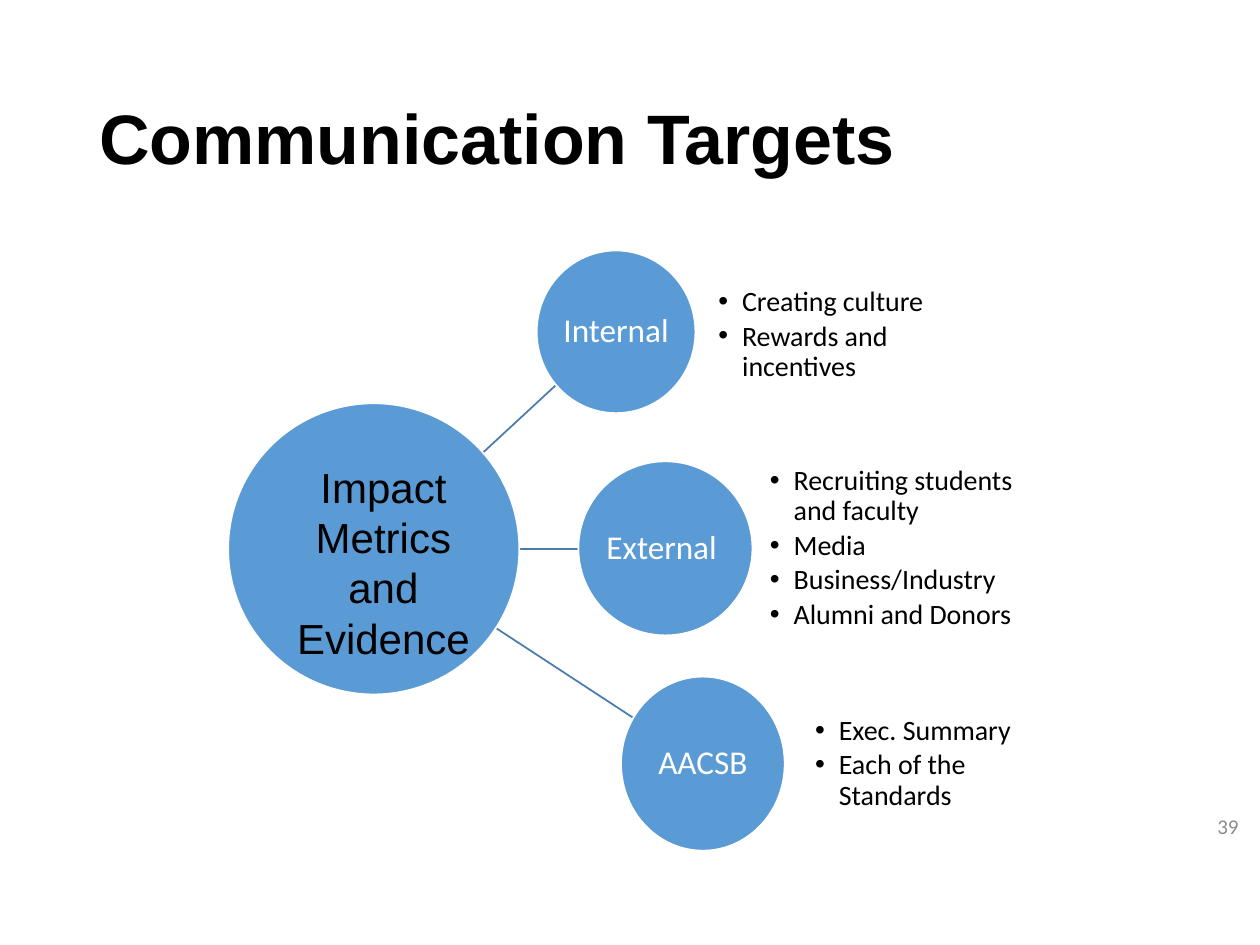
from dataclasses import dataclass

from lxml.etree import SubElement
from pptx import Presentation
from pptx.dml.color import RGBColor as RGB
from pptx.enum.shapes import MSO_CONNECTOR as CONN, MSO_SHAPE as SHAPE
from pptx.enum.text import MSO_ANCHOR as ANCHOR, MSO_AUTO_SIZE as AUTO, PP_ALIGN as ALIGN
from pptx.oxml.ns import qn
from pptx.util import Cm, Pt


@dataclass(frozen=True)
class Theme:
    blue: RGB = RGB.from_string("5B9BD5")
    link: RGB = RGB.from_string("497CAB")
    white: RGB = RGB.from_string("FFFFFF")
    black: RGB = RGB.from_string("000000")
    grey: RGB = RGB.from_string("8C8C8C")
    head: str = "Arial"
    text: str = "Calibri"
    title: Pt = Pt(40)
    hub: Pt = Pt(24)
    node: Pt = Pt(19)
    item: Pt = Pt(16)
    number: Pt = Pt(12)


T = Theme()
FLUSH = dict.fromkeys(("margin_left", "margin_top", "margin_right", "margin_bottom"), 0)


def write(sp, lines, font, para, frame, bullet=False):
    """Fill a shape with one paragraph per line."""
    tf = sp.text_frame
    tf.text = "\n".join(lines)
    for name, value in {"word_wrap": True, "auto_size": AUTO.NONE, **frame}.items():
        setattr(tf, name, value)
    for p in tf.paragraphs:
        if bullet:
            pPr = p._p.get_or_add_pPr()
            pPr.set("marL", str(Cm(0.48)))
            pPr.set("indent", str(-Cm(0.48)))
            SubElement(pPr, qn("a:buFont"), typeface=T.head)
            SubElement(pPr, qn("a:buChar"), char="•")
        for name, value in {"space_before": Pt(0), **para}.items():
            setattr(p, name, value)
        for r in p.runs:
            for name, value in font.items():
                if name == "color":
                    r.font.color.rgb = value
                else:
                    setattr(r.font, name, value)


def circle(x, y, w, h):
    """Add a blue circle with a white rim."""
    sp = s.shapes.add_shape(SHAPE.OVAL, Cm(x), Cm(y), Cm(w), Cm(h))
    sp.shadow.inherit = False
    sp.fill.solid()
    sp.fill.fore_color.rgb = T.blue
    sp.line.color.rgb = T.white
    sp.line.width = Pt(1)
    return sp


prs = Presentation()
prs.slide_width, prs.slide_height = Cm(25.4), Cm(19.05)
s = prs.slides.add_slide(prs.slide_layouts.get_by_name("Comparison"))
title, *bodies = s.placeholders

# Title
title.left, title.top, title.width, title.height = Cm(1.75), Cm(1.02), Cm(21.9), Cm(3.68)
write(title, ["Communication Targets"],
      {"name": T.head, "size": T.title, "bold": True, "color": T.black},
      {"alignment": ALIGN.LEFT, "line_spacing": 0.9},
      {"vertical_anchor": ANCHOR.MIDDLE})

# Links, behind the circles
for y, x_end, y_end in [(9.25, 11.2, 7.77), (11.07, 11.66, 11.07), (12.4, 12.78, 14.48)]:
    link = s.shapes.add_connector(CONN.STRAIGHT, Cm(9.6), Cm(y), Cm(x_end), Cm(y_end))
    link.line.color.rgb = T.link
    link.line.width = Pt(1)
    SubElement(link._element.spPr, qn("a:effectLst"))

# Hub
circle(4.6, 8.13, 5.87, 5.87)

# Targets: label, circle, list box, items
targets = [
    ("Internal", (10.82, 5.05, 3.2, 3.28), (14.48, 5.11, 4.8, 3.28),
     ["Creating culture", "Rewards and incentives"]),
    ("External ", (11.66, 9.3, 3.51, 3.51), (15.52, 9.3, 5.28, 3.51),
     ["Recruiting students and faculty", "Media", "Business/Industry", "Alumni and Donors"]),
    ("AACSB", (12.52, 13.64, 3.3, 3.51), (16.43, 13.64, 4.95, 3.51),
     ["Exec. Summary", "Each of the Standards"]),
]
for body, (label, node, box, items) in zip(bodies, targets):
    write(circle(*node), [label],
          {"name": T.text, "size": T.node, "color": T.white},
          {"alignment": ALIGN.CENTER, "line_spacing": 0.9},
          {"vertical_anchor": ANCHOR.MIDDLE, **FLUSH})
    body.left, body.top, body.width, body.height = map(Cm, box)
    write(body, items,
          {"name": T.text, "size": T.item, "bold": False, "color": T.black},
          {"alignment": ALIGN.LEFT, "line_spacing": 0.9, "space_after": Pt(2.5)},
          {"vertical_anchor": ANCHOR.MIDDLE, **FLUSH}, bullet=True)

# Unused placeholder
for body in bodies[len(targets):]:
    body._element.getparent().remove(body._element)

# Slide number
number = s.shapes.add_textbox(Cm(23.42), Cm(16.15), Cm(1.8), Cm(1.02))
write(number, ["39"], {"name": T.text, "size": T.number, "color": T.grey},
      {"alignment": ALIGN.RIGHT}, {"vertical_anchor": ANCHOR.MIDDLE})

# Hub caption
caption = s.shapes.add_textbox(Cm(5.72), Cm(9.17), Cm(4.02), Cm(4.37))
write(caption, ["Impact Metrics", "and Evidence"],
      {"name": T.head, "size": T.hub, "color": T.black},
      {"alignment": ALIGN.CENTER}, {"vertical_anchor": ANCHOR.TOP})

prs.save("out.pptx")
